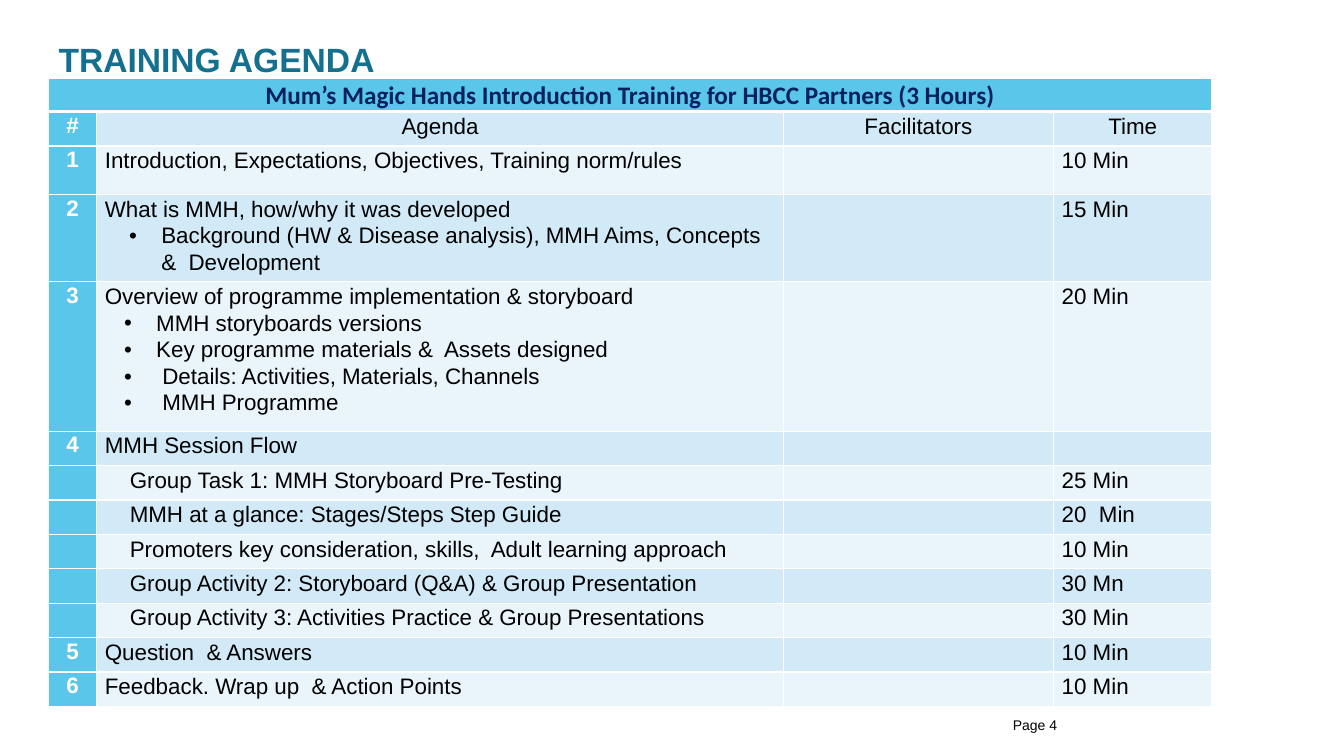
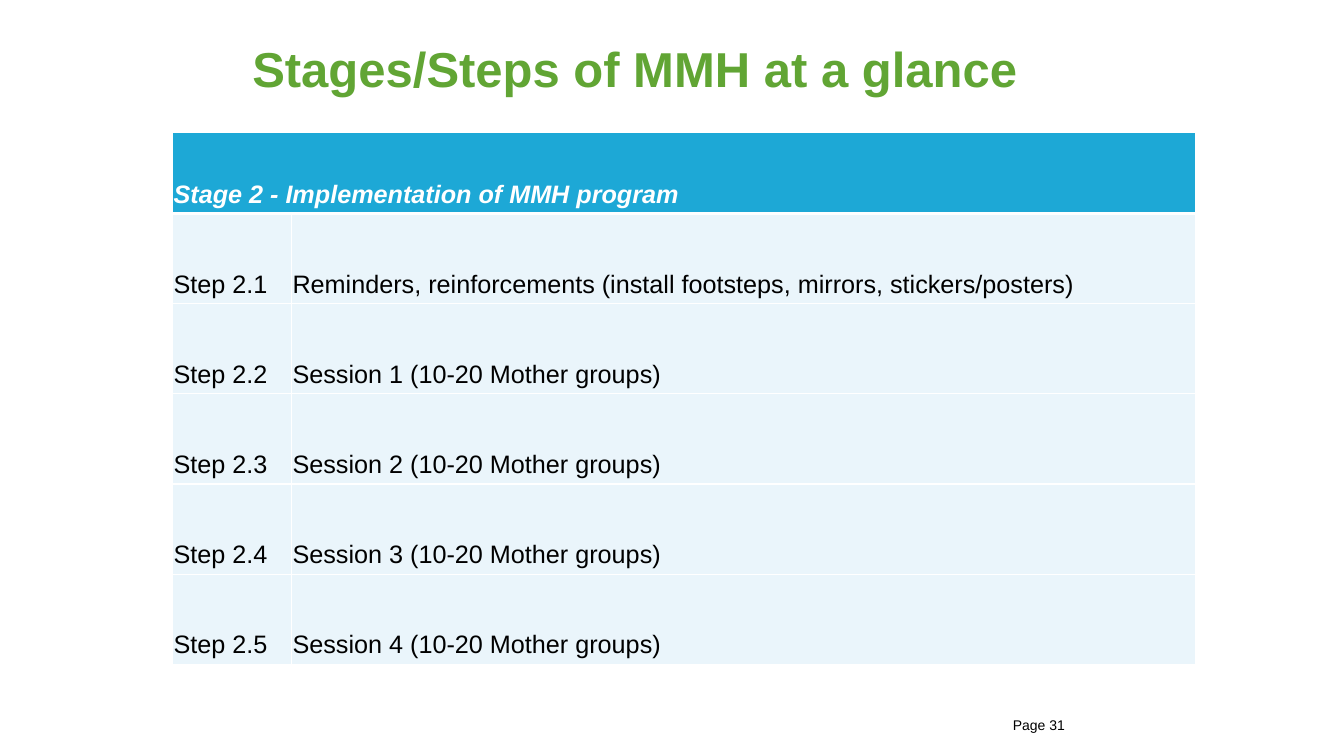
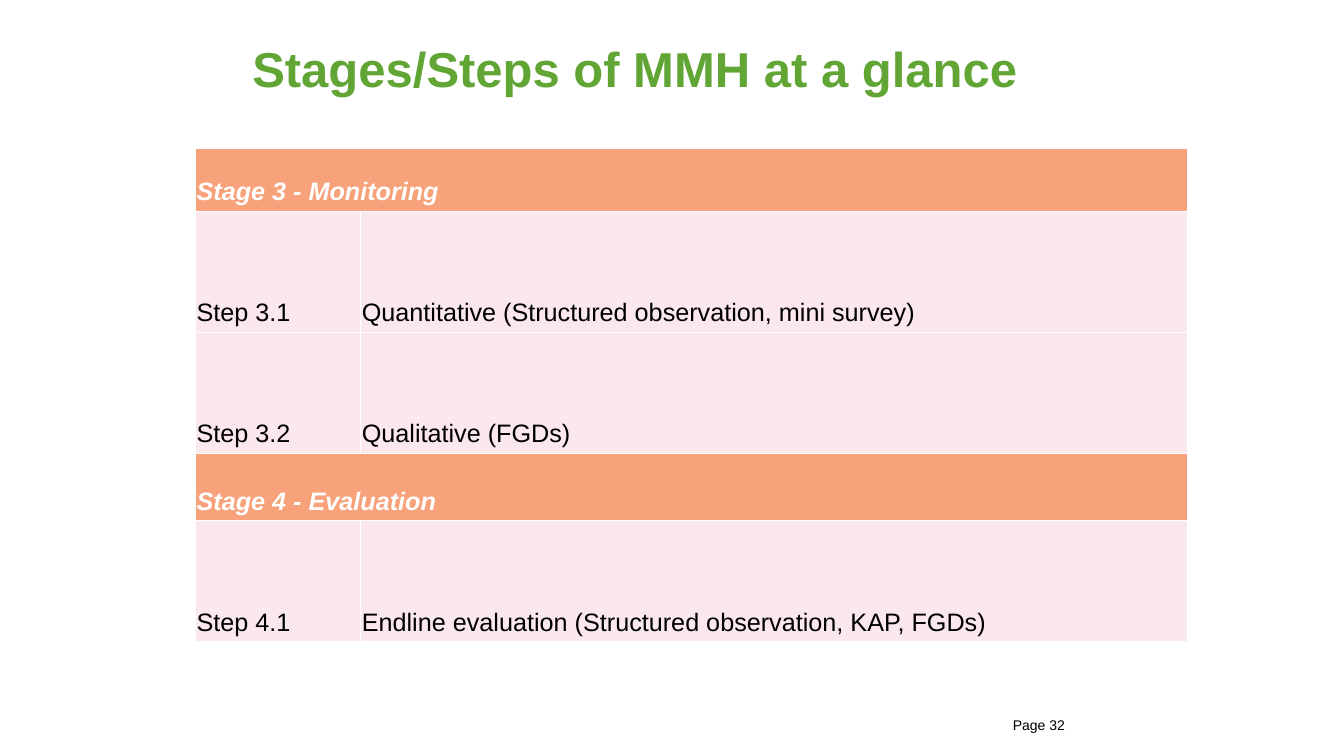
from lxml.etree import SubElement
from pptx import Presentation
from pptx.dml.color import RGBColor
from pptx.enum.text import MSO_ANCHOR as ANCHOR, MSO_AUTO_SIZE as AUTO, PP_ALIGN as ALIGN
from pptx.oxml.ns import qn
from pptx.util import Pt

FONT = "Arial"
BLACK, WHITE, NAVY = "000000", "FFFFFF", "002060"
TEAL, GREEN = "13708E", "61A534"
SKY, PALE, MID = "5AC6E9", "EAF5FB", "D2EAF7"
BLUE, ORANGE, PINK = "1DA8D6", "F7A27A", "FAE8ED"
STEP_INSETS = (0.7, 0.7, 0.7, 3.6)
AGENDA_INSETS = (5.8, 0.7, 5.8, 0)
NO_INSETS = (0, 0, 0, 0)
STAGE_TITLE = "Stages/Steps of MMH at a glance"
STAGE_TITLE_BOX = (173, 17, 608, 57)

# Left margin and first-line indent of each kind of agenda line
PLAIN, SUB = (0, 0), (17.8, 0)
BULLET, BULLET_WIDE, BULLET_DEEP = (36.7, -23), (41.1, -27.4), (40.3, -23)

LINE_H = 24.6
AGENDA = [
    ("1", [("Introduction, Expectations, Objectives, Training norm/rules", PLAIN)], "10 Min", 34.6),
    ("2", [("What is MMH, how/why it was developed", PLAIN),
           ("Background (HW & Disease analysis), MMH Aims, Concepts &  Development", BULLET_DEEP)],
     "15 Min", 59.8),
    ("3", [("Overview of programme implementation & storyboard", PLAIN),
           ("MMH storyboards versions", BULLET),
           ("Key programme materials &  Assets designed", BULLET),
           ("Details: Activities, Materials, Channels", BULLET_WIDE),
           ("MMH Programme", BULLET_WIDE)], "20 Min", 106.8),
    ("4", [("MMH Session Flow", PLAIN)], "", LINE_H),
    ("", [("Group Task 1: MMH Storyboard Pre-Testing", SUB)], "25 Min", LINE_H),
    ("", [("MMH at a glance: Stages/Steps Step Guide", SUB)], "20  Min", LINE_H),
    ("", [("Promoters key consideration, skills,  Adult learning approach", SUB)], "10 Min", LINE_H),
    ("", [("Group Activity 2: Storyboard (Q&A) & Group Presentation", SUB)], "30 Mn", LINE_H),
    ("", [("Group Activity 3: Activities Practice & Group Presentations", SUB)], "30 Min", LINE_H),
    ("5", [("Question  & Answers", PLAIN)], "10 Min", LINE_H),
    ("6", [("Feedback. Wrap up  & Action Points", PLAIN)], "10 Min", LINE_H),
]

# A stage row has one text, a step row has two
STAGE_2 = [("Stage 2 - Implementation of MMH program",),
           ("Step 2.1", "Reminders, reinforcements (install footsteps, mirrors, stickers/posters)")]
STAGE_2 += [(f"Step 2.{n + 1}", f"Session {n} (10-20 Mother groups)") for n in range(1, 5)]
STAGES_3_4 = [
    ("Stage 3 - Monitoring",),
    ("Step 3.1", "Quantitative (Structured observation, mini survey)"),
    ("Step 3.2", "Qualitative (FGDs)"),
    ("Stage 4 - Evaluation",),
    ("Step 4.1", "Endline evaluation (Structured observation, KAP, FGDs)"),
]


def rgb(color):
    return RGBColor.from_string(color)


def add_run(p, text, size, color, bold=False, italic=False, font=FONT):
    r = p.add_run()
    r.text = text
    r.font.name, r.font.size = font, Pt(size)
    r.font.bold, r.font.italic = bold, italic
    r.font.color.rgb = rgb(color)


def set_margins(target, insets):
    (target.margin_left, target.margin_top,
     target.margin_right, target.margin_bottom) = map(Pt, insets)


def new_slide(prs, title, box, size, color, page):
    """Add a slide with its title and page label."""
    slide = prs.slides.add_slide(prs.slide_layouts[5])
    sp = slide.shapes.title
    sp.left, sp.top, sp.width, sp.height = map(Pt, box)
    tf = sp.text_frame
    tf.auto_size, tf.word_wrap = AUTO.NONE, True
    tf.vertical_anchor = ANCHOR.MIDDLE
    set_margins(tf, (7.2, 6, 7.2, 0))
    p = tf.paragraphs[0]
    p.alignment = ALIGN.LEFT
    add_run(p, title, size, color, bold=True)

    label = slide.shapes.add_textbox(Pt(716.4), Pt(508.3), Pt(129), Pt(13))
    label.text_frame.word_wrap = True
    add_run(label.text_frame.paragraphs[0], f"Page {page}", 10, BLACK)
    return slide


def add_grid(slide, left, top, widths, heights):
    frame = slide.shapes.add_table(len(heights), len(widths), Pt(left), Pt(top),
                                   Pt(sum(widths)), Pt(sum(heights)))
    table = frame.table
    table.first_row = table.horz_banding = False
    for col, width in zip(table.columns, widths):
        col.width = Pt(width)
    for row, height in zip(table.rows, heights):
        row.height = Pt(height)
    return table


def style_cell(cell, fill, insets, anchor=ANCHOR.TOP, top=1, bottom=1):
    """Set fill, insets and white borders; top and bottom are line widths."""
    set_margins(cell, insets)
    cell.vertical_anchor = anchor
    tc_pr = cell._tc.get_or_add_tcPr()
    for side, width in zip("LRTB", (1, 1, top, bottom)):
        ln = SubElement(tc_pr, qn(f"a:ln{side}"), w=str(Pt(width)))
        SubElement(SubElement(ln, qn("a:solidFill")), qn("a:srgbClr"), val=WHITE)
    cell.fill.solid()
    cell.fill.fore_color.rgb = rgb(fill)


def add_line(p, text, indents=PLAIN, align=ALIGN.LEFT, size=16, color=BLACK, **style):
    margin, first = indents
    p_pr = p._p.get_or_add_pPr()
    p_pr.set("marL", str(Pt(margin)))
    p_pr.set("indent", str(Pt(first)))
    if first:
        SubElement(p_pr, qn("a:buFont"), typeface=FONT)
        SubElement(p_pr, qn("a:buChar"), char="•")
    p.line_spacing = 1.07
    p.alignment = align
    if text:
        add_run(p, text, size, color, **style)


def add_agenda(slide, left, top):
    heights = [23.5, LINE_H] + [height for *_, height in AGENDA]
    table = add_grid(slide, left, top, (34.5, 490.5, 193, 113), heights)
    for c in range(4):
        style_cell(table.cell(0, c), SKY, NO_INSETS, bottom=3)
    table.cell(0, 0).merge(table.cell(0, 3))
    add_line(table.cell(0, 0).text_frame.paragraphs[0],
             "Mum’s Magic Hands Introduction Training for HBCC Partners (3 Hours)",
             align=ALIGN.CENTER, size=18, color=NAVY, bold=True, font="Calibri")

    heads = ("#", [("Agenda", PLAIN)], "Time", LINE_H)
    for i, (number, lines, time, _) in enumerate([heads] + AGENDA):
        is_head = i == 0
        align = ALIGN.CENTER if is_head else ALIGN.LEFT
        cells = table.rows[i + 1].cells
        for c, cell in enumerate(cells):
            fill = SKY if c == 0 else (PALE if i % 2 else MID)
            style_cell(cell, fill, AGENDA_INSETS if c else NO_INSETS, top=3 if is_head else 1)
        add_line(cells[0].text_frame.paragraphs[0], number, align=ALIGN.CENTER,
                 color=WHITE, bold=True)
        tf = cells[1].text_frame
        for n, (text, indents) in enumerate(lines):
            p = tf.add_paragraph() if n else tf.paragraphs[0]
            add_line(p, text, indents, align)
        add_line(cells[2].text_frame.paragraphs[0], "Facilitators" if is_head else "", align=align)
        add_line(cells[3].text_frame.paragraphs[0], time, align=align)


def add_steps(slide, left, top, widths, heights, rows, stage_fill, step_fill, head_rule=1):
    table = add_grid(slide, left, top, widths, heights)
    for i, texts in enumerate(rows):
        is_stage = len(texts) == 1
        cells = list(table.rows[i].cells)
        for cell in cells:
            style_cell(cell, stage_fill if is_stage else step_fill, STEP_INSETS, ANCHOR.BOTTOM,
                       top=head_rule if i == 1 else 1, bottom=head_rule if i == 0 else 1)
        if is_stage:
            cells[0].merge(cells[1])
        for cell, text in zip(cells, texts):
            add_run(cell.text_frame.paragraphs[0], text, 18, WHITE if is_stage else BLACK,
                    bold=is_stage, italic=is_stage)


def main():
    prs = Presentation()
    prs.slide_width, prs.slide_height = Pt(960), Pt(540)

    slide = new_slide(prs, "TRAINING AGENDA", (34.6, 22, 324, 34), 24, TEAL, 4)
    add_agenda(slide, 34.6, 56.2)

    slide = new_slide(prs, STAGE_TITLE, STAGE_TITLE_BOX, 35, GREEN, 31)
    add_steps(slide, 123.3, 94.6, (85, 645.5), [58] + [64.4] * 5, STAGE_2, BLUE, PALE, head_rule=3)

    slide = new_slide(prs, STAGE_TITLE, STAGE_TITLE_BOX, 35, GREEN, 32)
    add_steps(slide, 139.8, 105.8, (118, 590.5), (45.2, 86.4, 86.4, 48, 86.4),
              STAGES_3_4, ORANGE, PINK)

    prs.save("out.pptx")


if __name__ == "__main__":
    main()
